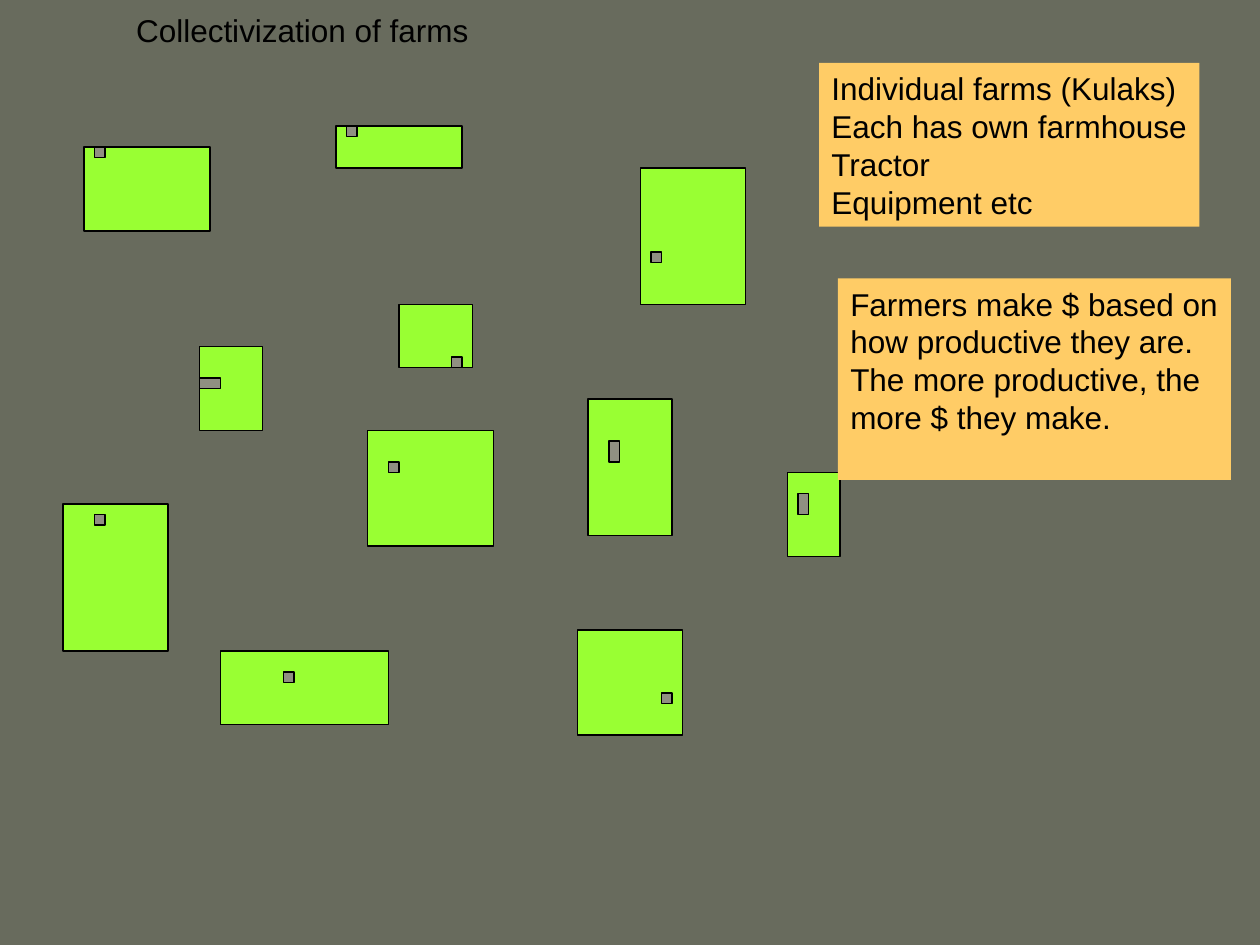
import pptx
import pptx.util
import pptx.dml.color
import pptx.enum.shapes
import pptx.enum.text

Inches = pptx.util.Inches

COLORS = {"background": "686B5D", "farm": "99FF33", "house": "909082",
          "note": "FFCC66", "ink": "000000"}

TITLE = "Collectivization of farms"
TITLE_BOX = (0.98, 0.04, 2.84, 0.4)

# Farms and their farmhouses: left, top, width, height in twelfths of an inch
GRID = 12
FARMS = [
    ((8, 14, 12, 8), (9, 14, 1, 1)),
    ((19, 33, 6, 8), (19, 36, 2, 1)),
    ((21, 62, 16, 7), (27, 64, 1, 1)),
    ((61, 16, 10, 13), (62, 24, 1, 1)),
    ((38, 29, 7, 6), (43, 34, 1, 1)),
    ((55, 60, 10, 10), (63, 66, 1, 1)),
    ((35, 41, 12, 11), (37, 44, 1, 1)),
    ((32, 12, 12, 4), (33, 12, 1, 1)),
    ((6, 48, 10, 14), (9, 49, 1, 1)),
    ((75, 45, 5, 8), (76, 47, 1, 2)),
    ((56, 38, 8, 13), (58, 42, 1, 2)),
]

# Notes: box in inches, wrapping, paragraphs
NOTES = [
    ((6.5, 0.5, 3.02, 1.3), False,
     ["Individual farms (Kulaks)", "Each has own farmhouse", "Tractor", "Equipment etc"]),
    ((6.65, 2.21, 3.12, 1.6), True,
     ["Farmers make $ based on how productive they are. "
      "The more productive, the more $ they make."]),
]


def rgb(name):
    return pptx.dml.color.RGBColor.from_string(COLORS[name])


def add_rect(slide, box, fill, outlined):
    sp = slide.shapes.add_shape(pptx.enum.shapes.MSO_SHAPE.RECTANGLE,
                                *[Inches(v) for v in box])
    sp.shadow.inherit = False
    sp.fill.solid()
    sp.fill.fore_color.rgb = rgb(fill)
    if outlined:
        sp.line.color.rgb = rgb("ink")
        sp.line.width = pptx.util.Pt(0.75)
    else:
        sp.line.fill.background()
    return sp


def set_text(sp, lines, wrap):
    tf = sp.text_frame
    tf.text = "\n".join(lines)
    tf.word_wrap = wrap
    tf.auto_size = pptx.enum.text.MSO_AUTO_SIZE.NONE
    tf.vertical_anchor = pptx.enum.text.MSO_ANCHOR.TOP
    for p in tf.paragraphs:
        p.alignment = pptx.enum.text.PP_ALIGN.LEFT
        p.font.name = "Arial"
        p.font.size = pptx.util.Pt(18)
        p.font.color.rgb = rgb("ink")


def main():
    prs = pptx.Presentation()
    prs.slide_width, prs.slide_height = Inches(10), Inches(7.5)
    slide = prs.slides.add_slide(prs.slide_layouts[5])
    slide.background.fill.solid()
    slide.background.fill.fore_color.rgb = rgb("background")

    # Title
    title = slide.shapes.title
    title.left, title.top, title.width, title.height = [Inches(v) for v in TITLE_BOX]
    set_text(title, [TITLE], False)

    # Farms with their farmhouses
    for farm, house in FARMS:
        for cells, fill in ((farm, "farm"), (house, "house")):
            add_rect(slide, [c / GRID for c in cells], fill, True)

    # Notes
    for box, wrap, lines in NOTES:
        set_text(add_rect(slide, box, "note", False), lines, wrap)

    prs.save("out.pptx")


if __name__ == "__main__":
    main()
